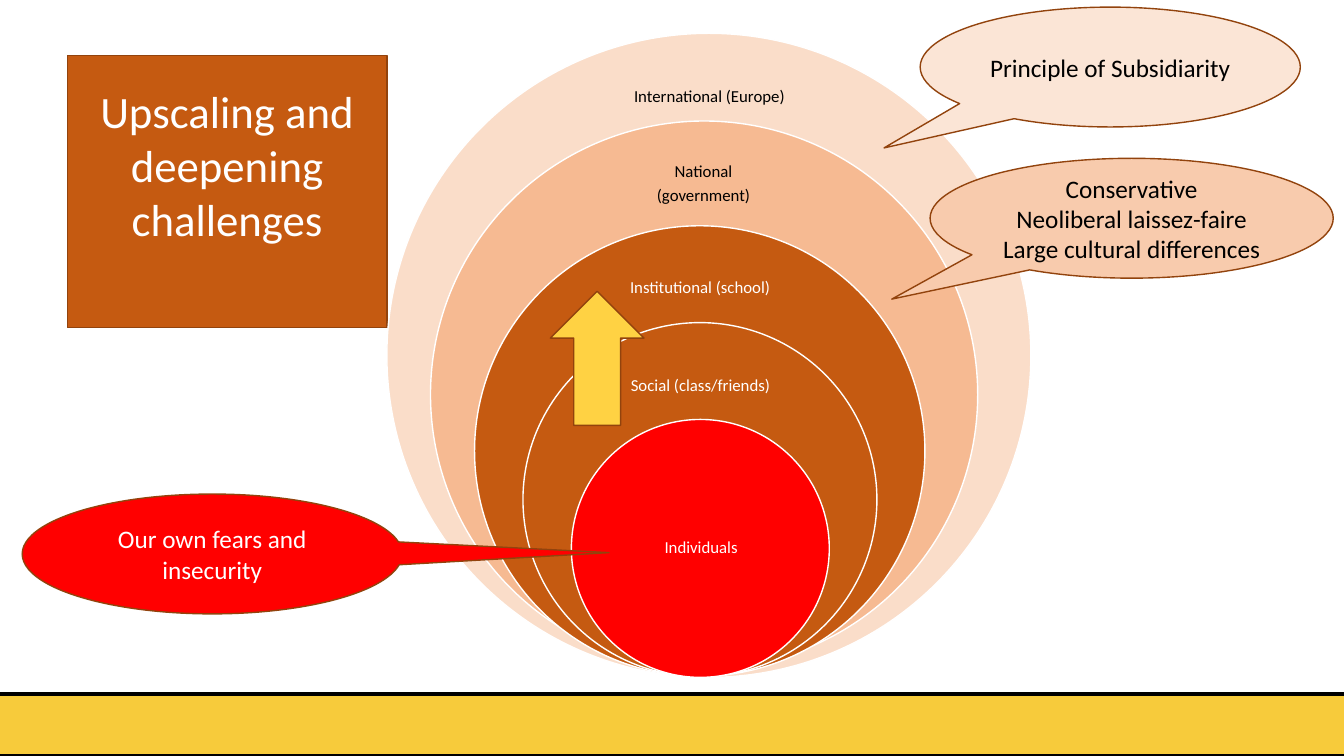
"""Build a slide of nested circles showing how challenges upscale and deepen."""
from dataclasses import dataclass

from pptx import Presentation
from pptx.dml.color import RGBColor
from pptx.enum.shapes import MSO_SHAPE
from pptx.enum.text import MSO_ANCHOR, MSO_AUTO_SIZE, PP_ALIGN
from pptx.util import Cm, Pt


@dataclass(frozen=True)
class Theme:
    font: str = "Calibri"
    white: str = "FFFFFF"
    black: str = "000000"
    red: str = "FF0000"
    orange: str = "C55A11"
    outline: str = "92430D"
    peach: str = "F6BA92"
    pale_peach: str = "FADDC9"
    callout_peach: str = "F8CBAD"
    callout_pale: str = "FBE5D6"
    arrow_yellow: str = "FFD243"
    band_yellow: str = "F7CB3B"
    title_size: int = 32
    callout_size: int = 18
    ring_size: int = 12


theme = Theme()


def paint(shape, fill, line, width=1):
    """Give a shape a solid fill and outline."""
    shape.fill.solid()
    shape.fill.fore_color.rgb = RGBColor.from_string(fill)
    shape.line.color.rgb = RGBColor.from_string(line)
    shape.line.width = Pt(width)


def write(shape, text, size, color, frame_format=None, paragraph_format=None):
    """Write centred paragraphs, one for each line of text."""
    frame = shape.text_frame
    frame.text = text
    frame_values = {"word_wrap": True, "auto_size": MSO_AUTO_SIZE.NONE,
                    "vertical_anchor": MSO_ANCHOR.MIDDLE, **(frame_format or {})}
    for name, value in frame_values.items():
        setattr(frame, name, value)
    for paragraph in frame.paragraphs:
        paragraph_values = {"alignment": PP_ALIGN.CENTER, **(paragraph_format or {})}
        for name, value in paragraph_values.items():
            setattr(paragraph, name, value)
        for name, value in {"name": theme.font, "size": Pt(size), "bold": False}.items():
            setattr(paragraph.font, name, value)
        paragraph.font.color.rgb = RGBColor.from_string(color)


presentation = Presentation()
presentation.slide_width = Cm(33.87)
presentation.slide_height = Cm(19.05)
slide = presentation.slides.add_slide(presentation.slide_layouts[5])
shapes = slide.shapes

title = shapes.title
title_place = {"left": 1.7, "top": 1.4, "width": 8.05, "height": 6.86}
for name, value in title_place.items():
    setattr(title, name, Cm(value))
paint(title, theme.orange, theme.outline)
write(title, "Upscaling and\ndeepening\nchallenges", theme.title_size, theme.white,
      {"margin_bottom": Cm(1.48)})

band = shapes.add_shape(MSO_SHAPE.RECTANGLE, Cm(-0.94), Cm(17.48), Cm(35.74), Cm(1.57))
band.shadow.inherit = False
paint(band, theme.band_yellow, theme.black, 3)

rings = [
    ("International (Europe)", (9.75, 0.84, 16.23), (14.83, 1.63, 6.1, 1.63),
     theme.pale_peach, theme.black),
    ("National\n(government)", (10.85, 3.05, 13.79), (14.76, 3.86, 5.94, 1.57),
     theme.peach, theme.black),
    ("Institutional (school)", (11.96, 5.69, 11.35), (14.71, 6.48, 5.87, 1.57),
     theme.orange, theme.white),
    ("Social (class/friends)", (13.18, 8.13, 8.92), (15.24, 8.94, 4.83, 1.6),
     theme.orange, theme.white),
    ("Individuals", (14.4, 10.57, 6.5), (15.37, 12.19, 4.6, 3.25),
     theme.red, theme.white),
]
ring_margins = {f"margin_{side}": Cm(0.23) for side in ("left", "top", "right", "bottom")}
ring_spacing = {"line_spacing": 0.9, "space_after": Pt(4.2)}
for text, (left, top, diameter), label_box, fill, color in rings:
    ring = shapes.add_shape(MSO_SHAPE.OVAL, Cm(left), Cm(top), Cm(diameter), Cm(diameter))
    ring.shadow.inherit = False
    paint(ring, fill, theme.white)
    label = shapes.add_textbox(*map(Cm, label_box))
    write(label, text, theme.ring_size, color, ring_margins, ring_spacing)

arrow = shapes.add_shape(MSO_SHAPE.UP_ARROW, Cm(13.87), Cm(7.34), Cm(2.36), Cm(3.38))
arrow.shadow.inherit = False
paint(arrow, theme.arrow_yellow, theme.outline)

callouts = [
    ("Conservative\nNeoliberal laissez-faire\nLarge cultural differences",
     (23.44, 3.99, 10.16), (-0.595, 0.675), theme.callout_peach, theme.black),
    ("Principle of Subsidiarity",
     (23.19, 0.18, 9.58), (-0.595, 0.675), theme.callout_pale, theme.black),
    ("Our own fears and insecurity",
     (0.56, 12.45, 9.58), (1.044, -0.011), theme.red, theme.white),
]
for text, (left, top, width), tip, fill, color in callouts:
    callout = shapes.add_shape(MSO_SHAPE.OVAL_CALLOUT, Cm(left), Cm(top), Cm(width), Cm(3.02))
    callout.shadow.inherit = False
    for index, offset in enumerate(tip):
        callout.adjustments[index] = offset
    paint(callout, fill, theme.outline)
    write(callout, text, theme.callout_size, color)

presentation.save("out.pptx")
